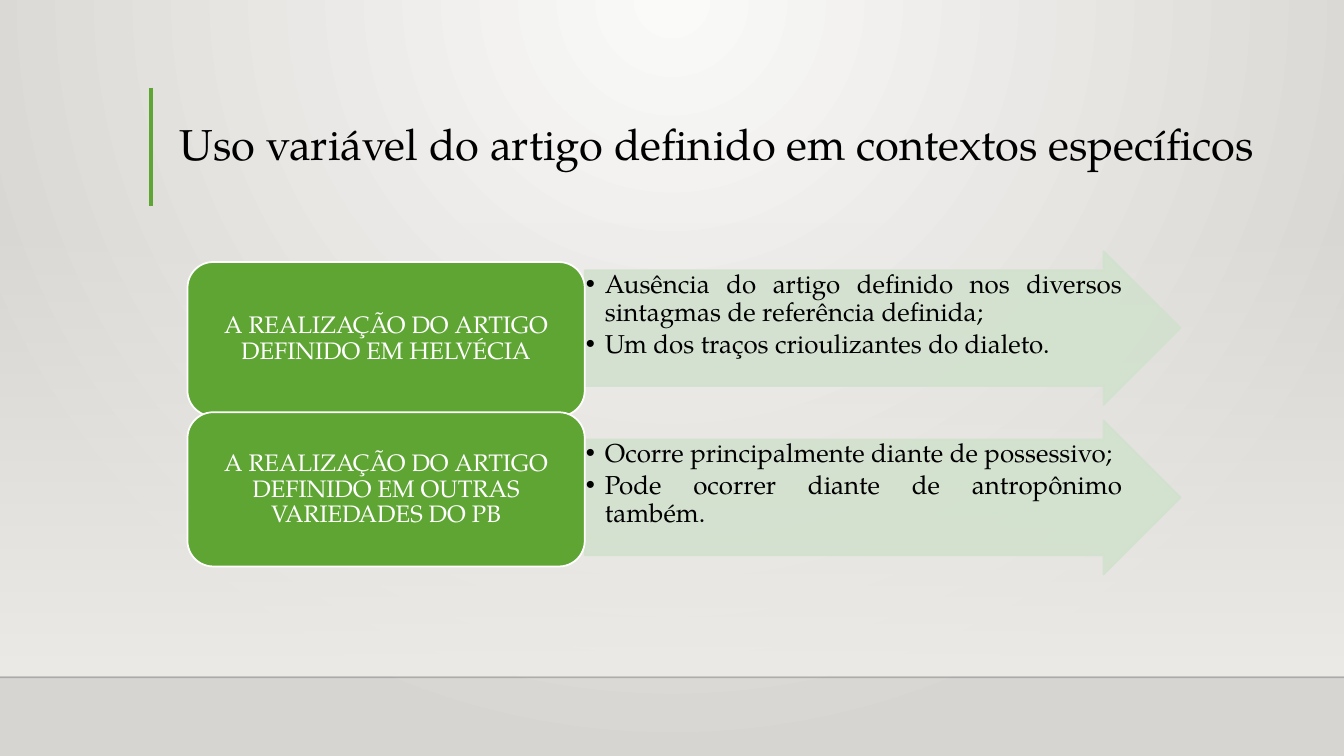
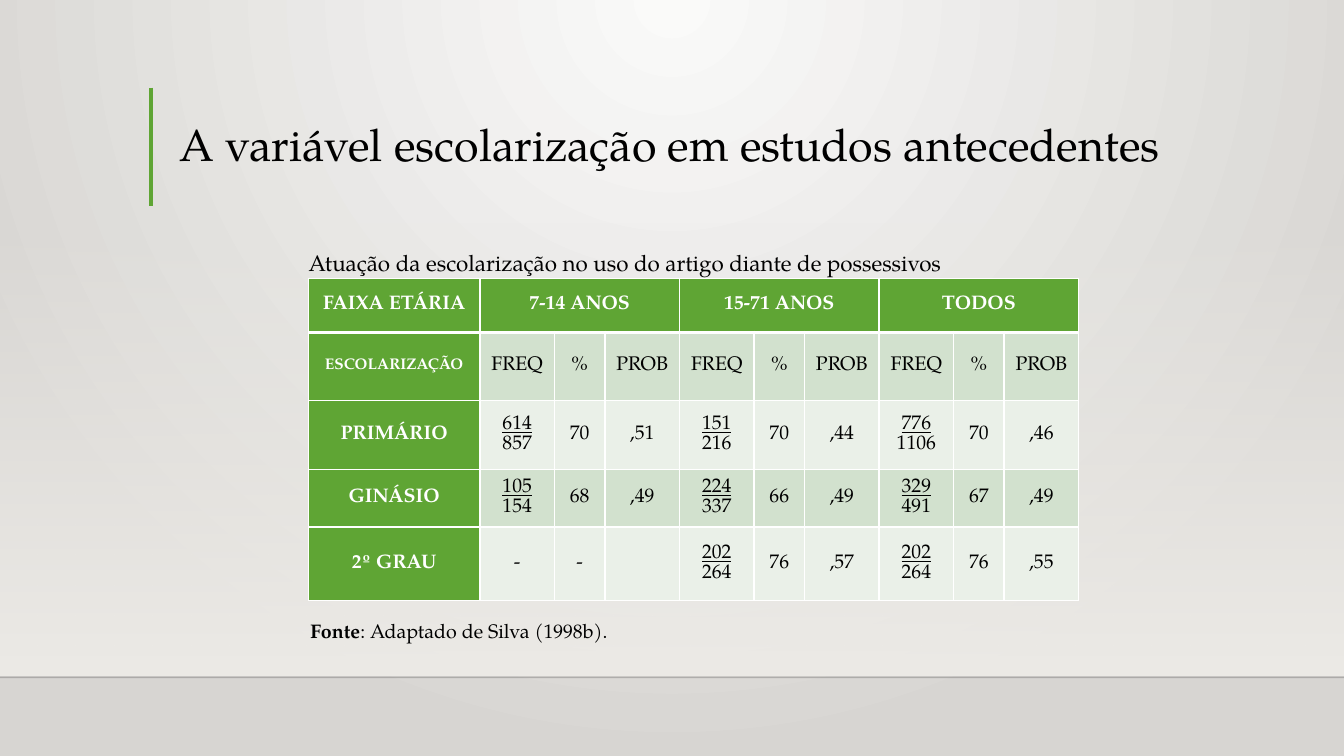
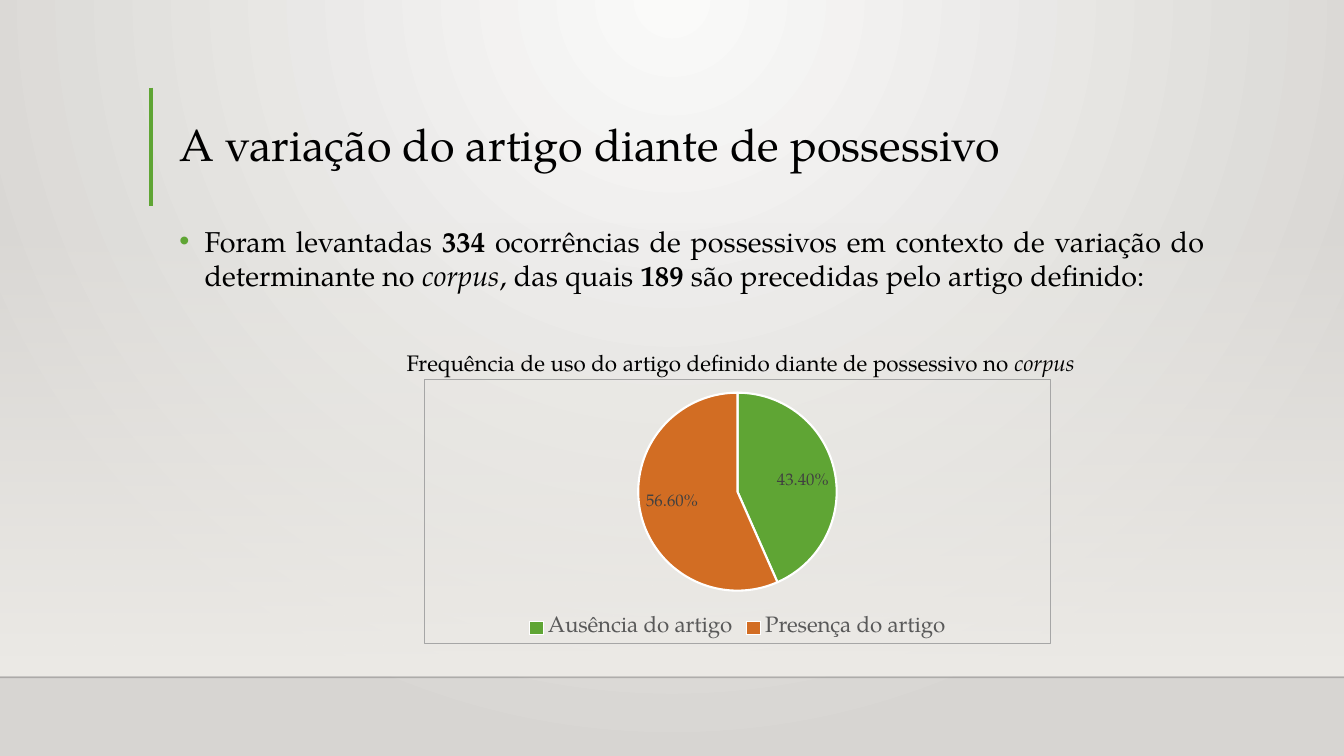
from dataclasses import dataclass, field

from pptx import Presentation
from pptx.chart import data as cd
from pptx.dml.color import RGBColor
from pptx.enum import chart as ch, shapes, text
from pptx.oxml import parse_xml
from pptx.oxml.ns import nsdecls, qn
from pptx.util import Inches, Pt

FONT = "TeX Gyre Pagella"
BLACK = RGBColor(0x00, 0x00, 0x00)
LINE_BLACK = RGBColor(0x00, 0x00, 0x01)
WHITE = RGBColor(0xFF, 0xFF, 0xFF)
GREEN = RGBColor(0x5F, 0xA5, 0x34)
PALE_GREEN = RGBColor(0xD2, 0xE1, 0xCE)
PALEST_GREEN = RGBColor(0xEA, 0xF0, 0xE8)
ORANGE = RGBColor(0xD2, 0x6D, 0x23)
LEGEND_GREY = RGBColor(0x59, 0x59, 0x59)
LABEL_GREY = RGBColor(0x40, 0x40, 0x40)
BORDER_GREY = RGBColor(0xA6, 0xA6, 0xA6)
GLOW = RGBColor(0xFA, 0xFA, 0xF9)
EDGE = RGBColor(0xD7, 0xD5, 0xD2)
FLOOR = RGBColor(0xED, 0xEB, 0xE7)

LEFT, CENTER, JUSTIFY = (text.PP_ALIGN.LEFT, text.PP_ALIGN.CENTER,
                         text.PP_ALIGN.JUSTIFY)
TOP, MIDDLE = text.MSO_ANCHOR.TOP, text.MSO_ANCHOR.MIDDLE
CAPTION_INSETS = (0.1, 0)


@dataclass
class Para:
    """Runs are plain strings or (string, font values) pairs."""
    runs: list
    size: float
    color: RGBColor = BLACK
    bullet: float = 0  # hanging indent in inches
    bullet_color: RGBColor = BLACK
    fmt: dict = field(default_factory=dict)


@dataclass
class Step:
    label: str
    points: list
    box_top: float
    arrow_top: float


STEPS = [
    Step("A REALIZAÇÃO DO ARTIGO DEFINIDO EM HELVÉCIA",
         ["Ausência do artigo definido nos diversos sintagmas de referência definida;",
          "Um dos traços crioulizantes do dialeto."], 2.6, 2.49),
    Step("A REALIZAÇÃO DO ARTIGO DEFINIDO EM OUTRAS VARIEDADES DO PB",
         ["Ocorre principalmente diante de possessivo;",
          "Pode ocorrer diante de antropônimo também."], 4.09, 4.17),
]

AGE_GROUPS = ["7-14 ANOS", "15-71 ANOS", "TODOS"]
ROWS = [
    ["ESCOLARIZAÇÃO"] + ["FREQ", "%", "PROB"] * 3,
    ["PRIMÁRIO", "614/857", "70", ",51", "151/216", "70", ",44", "776/1106", "70", ",46"],
    ["GINÁSIO", "105/154", "68", ",49", "224/337", "66", ",49", "329/491", "67", ",49"],
    ["2º GRAU", "-", "-", "", "202/264", "76", ",57", "202/264", "76", ",55"],
]
COL_WIDTHS = [1.7] + [0.74, 0.5, 0.74] * 3
ROW_HEIGHTS = [0.54, 0.67, 0.69, 0.57, 0.73]


# Text
def style_font(font, size: float, color: RGBColor, **values) -> None:
    for name, value in {"name": FONT, "size": Pt(size), **values}.items():
        setattr(font, name, value)
    font.color.rgb = color


def set_bullet(p, indent: float, color: RGBColor) -> None:
    pPr = p._p.get_or_add_pPr()
    pPr.set("marL", str(Inches(indent)))
    pPr.set("indent", str(-Inches(indent)))
    if not indent:
        pPr.append(parse_xml(f"<a:buNone {nsdecls('a')}/>"))
        return
    for xml in (f'<a:buClr {nsdecls("a")}><a:srgbClr val="{color}"/></a:buClr>',
                f'<a:buFont {nsdecls("a")} typeface="Arial"/>',
                f'<a:buChar {nsdecls("a")} char="•"/>'):
        pPr.append(parse_xml(xml))


def write(tf, paras: list, anchor=None, insets=(0.1, 0.05)) -> None:
    if anchor is not None:
        tf.auto_size = text.MSO_AUTO_SIZE.NONE
        tf.word_wrap = True
        tf.vertical_anchor = anchor
        tf.margin_left = tf.margin_right = Inches(insets[0])
        tf.margin_top = tf.margin_bottom = Inches(insets[1])
    for i, para in enumerate(paras):
        p = tf.add_paragraph() if i else tf.paragraphs[0]
        set_bullet(p, para.bullet, para.bullet_color)
        for name, value in {"space_before": Pt(0), **para.fmt}.items():
            setattr(p, name, value)
        for run in para.runs:
            words, values = (run, {}) if isinstance(run, str) else run
            r = p.add_run()
            r.text = words
            style_font(r.font, para.size, para.color, **values)


def place(sp, left: float, top: float, width: float, height: float):
    sp.left, sp.top, sp.width, sp.height = map(Inches, (left, top, width, height))
    return sp


def add_caption(s, box: tuple, para: Para) -> None:
    tf = s.shapes.add_textbox(*map(Inches, box)).text_frame
    write(tf, [para], MIDDLE, CAPTION_INSETS)


# Shapes
def set_gradient(parent, stops: list, shade: str) -> None:
    """Give an element that already has a gradient its stops and direction."""
    stop_xml = "".join(
        f'<a:gs pos="{pos}"><a:srgbClr val="{color}"><a:alpha val="{alpha}"/>'
        "</a:srgbClr></a:gs>" for pos, color, alpha in stops)
    old = parent.find(qn("a:gradFill"))
    parent.replace(old, parse_xml(
        f'<a:gradFill {nsdecls("a")} rotWithShape="1"><a:gsLst>{stop_xml}</a:gsLst>'
        f"{shade}</a:gradFill>"))


def set_alpha(sp, percent: int) -> None:
    for clr in sp._element.spPr.iter(qn("a:srgbClr")):
        clr.append(parse_xml(f'<a:alpha {nsdecls("a")} val="{percent * 1000}"/>'))


def add_block(s, kind, box: tuple, fill: RGBColor, line: RGBColor):
    sp = s.shapes.add_shape(kind, *map(Inches, box))
    sp.shadow.inherit = False
    sp.fill.solid()
    sp.fill.fore_color.rgb = fill
    sp.line.color.rgb = line
    sp.line.width = Pt(1.25)
    return sp


def add_line(s, ends: tuple, color: RGBColor, width: float):
    cx = s.shapes.add_connector(shapes.MSO_CONNECTOR.STRAIGHT, *map(Inches, ends))
    cx.line.color.rgb = color
    cx.line.width = Pt(width)
    cx._element.spPr.append(parse_xml(f"<a:effectLst {nsdecls('a')}/>"))
    return cx


# Shared look
def decorate_master(prs, s) -> None:
    """Set the background and move the shared parts from a slide to the master."""
    master = prs.slide_master
    master.background.fill.gradient()
    set_gradient(master.element.find(".//" + qn("p:bgPr")),
                 [(0, GLOW, 100000), (100000, EDGE, 100000)],
                 '<a:path path="circle"><a:fillToRect l="43000" t="0" r="43000" '
                 'b="100000"/></a:path>')

    floor = s.shapes.add_shape(shapes.MSO_SHAPE.RECTANGLE,
                               *map(Inches, (0, 2.2, 13.33, 4.5)))
    floor.shadow.inherit = False
    floor.line.fill.background()
    floor.fill.gradient()
    set_gradient(floor._element.spPr, [(0, FLOOR, 0), (100000, FLOOR, 100000)],
                 '<a:lin ang="5400000" scaled="0"/>')
    horizon = add_line(s, (0, 6.72, 13.33, 6.72), LINE_BLACK, 1)
    set_alpha(horizon, 20)
    title_bar = add_line(s, (1.5, 0.87, 1.5, 2.04), GREEN, 3)

    for i, sp in enumerate((floor, horizon, title_bar)):
        sp._element.xpath(".//p:cNvPr")[0].set("id", str(101 + i))
        master.shapes.element.append(sp._element)


def add_slide(prs, layout: int, title: str, size: float = 32, width: float = 10.41):
    s = prs.slides.add_slide(prs.slide_layouts[layout])
    sp = place(s.shapes.title, 1.68, 0.88, width, 1.15)
    write(sp.text_frame, [Para([title], size, fmt={
        "alignment": LEFT, "line_spacing": 0.9})], MIDDLE)
    return s


# Slide 1: labels with arrows
def add_step(s, step: Step) -> None:
    arrow = add_block(s, shapes.MSO_SHAPE.RIGHT_ARROW,
                      (5.8, step.arrow_top, 5.91, 1.53), PALE_GREEN, PALE_GREEN)
    arrow.adjustments[0], arrow.adjustments[1] = 0.75, 0.5
    set_alpha(arrow, 90)
    fmt = {"alignment": JUSTIFY, "line_spacing": 0.9, "space_after": Pt(2.8)}
    write(arrow.text_frame, [Para([point], 18.5, bullet=0.19, fmt=fmt)
                             for point in step.points], TOP, (0.01, 0.01))
    box = add_block(s, shapes.MSO_SHAPE.ROUNDED_RECTANGLE,
                    (1.86, step.box_top, 3.94, 1.53), GREEN, WHITE)
    write(box.text_frame, [Para([step.label], 17, WHITE, fmt={
        "alignment": CENTER, "line_spacing": 0.9})], MIDDLE, (0.07, 0.04))


# Slide 2: table
def set_borders(cell, bottom: float) -> None:
    tcPr = cell._tc.get_or_add_tcPr()
    for side, width in (("L", 1), ("R", 1), ("T", 1), ("B", bottom)):
        tcPr.append(parse_xml(
            f'<a:ln{side} {nsdecls("a")} w="{Pt(width)}"><a:solidFill>'
            f'<a:srgbClr val="{WHITE}"/></a:solidFill></a:ln{side}>'))


def fill_cell(cell, words: str, row: int, col: int) -> None:
    heading = row == 0 or col == 0
    set_borders(cell, 3 if row == 0 else 1)
    cell.fill.solid()
    cell.fill.fore_color.rgb = (GREEN if heading else
                                PALE_GREEN if row % 2 else PALEST_GREEN)
    cell.vertical_anchor = MIDDLE
    cell.margin_left = cell.margin_right = Inches(0.07)
    cell.margin_top = cell.margin_bottom = 0
    if not words:
        return
    lines = words.split("/")
    size = 11 if (row, col) == (1, 0) else 14
    write(cell.text_frame, [
        Para([(line, {"bold": heading, "underline": i < len(lines) - 1})], size,
             WHITE if heading else BLACK, fmt={"alignment": CENTER})
        for i, line in enumerate(lines)])


def add_score_table(s) -> None:
    table = s.shapes.add_table(
        len(ROW_HEIGHTS), len(COL_WIDTHS),
        *map(Inches, (3.06, 2.76, sum(COL_WIDTHS), sum(ROW_HEIGHTS)))).table
    for column, width in zip(table.columns, COL_WIDTHS):
        column.width = Inches(width)
    for row, height in zip(table.rows, ROW_HEIGHTS):
        row.height = Inches(height)
    header = ["FAIXA ETÁRIA"]
    for i, group in enumerate(AGE_GROUPS):
        header += [group, "", ""]
        table.cell(0, 3 * i + 1).merge(table.cell(0, 3 * i + 3))
    for row, values in enumerate([header] + ROWS):
        for col, words in enumerate(values):
            fill_cell(table.cell(row, col), words, row, col)


# Slide 3: pie chart
def add_pie(s) -> None:
    data = cd.CategoryChartData(number_format="0.00%")
    data.categories = ["Ausência do artigo", "Presença do artigo"]
    data.add_series("Series 1", (0.434, 0.566))
    chart = s.shapes.add_chart(ch.XL_CHART_TYPE.PIE,
                               *map(Inches, (4.21, 3.76, 6.21, 2.63)), data).chart
    style_font(chart.font, 10, BLACK)
    chart.has_title = False
    chart.has_legend = True
    chart.legend.position = ch.XL_LEGEND_POSITION.BOTTOM
    chart.legend.include_in_layout = False
    style_font(chart.legend.font, 16, LEGEND_GREY)

    plot = chart.plots[0]
    plot.vary_by_categories = True
    for i, color in enumerate((GREEN, ORANGE)):
        fmt = plot.series[0].points[i].format
        fmt.fill.solid()
        fmt.fill.fore_color.rgb = color
        fmt.line.color.rgb = WHITE
        fmt.line.width = Pt(1.5)
    plot.has_data_labels = True
    labels = plot.data_labels
    for name, value in {"show_value": True, "show_percentage": False,
                        "number_format": "0.00%", "number_format_is_linked": False,
                        "position": ch.XL_LABEL_POSITION.INSIDE_END}.items():
        setattr(labels, name, value)
    style_font(labels.font, 12, LABEL_GREY)

    # Plot position and outer border
    area = chart._chartSpace.find(".//" + qn("c:plotArea"))
    for old in area.findall(qn("c:layout")):
        area.remove(old)
    sizes = "".join(f'<c:{k} val="{v}"/>' for k, v in
                    (("x", 0.34), ("y", 0.05), ("w", 0.32), ("h", 0.75)))
    area.insert(0, parse_xml(
        f'<c:layout {nsdecls("c")}><c:manualLayout><c:layoutTarget val="inner"/>'
        f'<c:xMode val="edge"/><c:yMode val="edge"/>{sizes}</c:manualLayout></c:layout>'))
    chart._chartSpace.find(qn("c:chart")).addnext(parse_xml(
        f'<c:spPr {nsdecls("c", "a")}><a:noFill/><a:ln w="{Pt(0.75)}"><a:solidFill>'
        f'<a:srgbClr val="{BORDER_GREY}"/></a:solidFill></a:ln></c:spPr>'))


def main() -> None:
    prs = Presentation()
    prs.slide_width, prs.slide_height = Inches(13.33), Inches(7.5)
    bold, italic = {"bold": True}, {"italic": True}

    s = add_slide(prs, 5, "Uso variável do artigo definido em contextos específicos",
                  31, 11.01)
    decorate_master(prs, s)
    for step in STEPS:
        add_step(s, step)

    s = add_slide(prs, 1, "A variável escolarização em estudos antecedentes")
    caption = place(s.placeholders[1], 2.96, 2.44, 7.75, 0.32)
    write(caption.text_frame, [Para(
        ["Atuação da escolarização no uso do artigo diante de possessivos"], 16)],
        MIDDLE, CAPTION_INSETS)
    add_score_table(s)
    add_caption(s, (2.98, 6.06, 7.74, 0.4), Para(
        [("Fonte", bold), ": Adaptado de Silva (1998b)."], 14))

    s = add_slide(prs, 1, "A variação do artigo diante de possessivo")
    body = place(s.placeholders[1], 1.68, 2.17, 10.37, 1.04)
    write(body.text_frame, [Para(
        ["Foram levantadas ", ("334 ", bold),
         "ocorrências de possessivos em contexto de variação do determinante no ",
         ("corpus", italic), ", das quais ", ("189 ", bold),
         "são precedidas pelo artigo definido:"],
        20.5, bullet=0.25, bullet_color=GREEN, fmt={"alignment": JUSTIFY})], TOP)
    add_caption(s, (3.9, 3.44, 6.89, 0.32), Para(
        ["Frequência de uso do artigo definido diante de possessivo no ",
         ("corpus", italic)], 16, fmt={"alignment": CENTER}))
    add_pie(s)

    prs.save("out.pptx")


if __name__ == "__main__":
    main()
